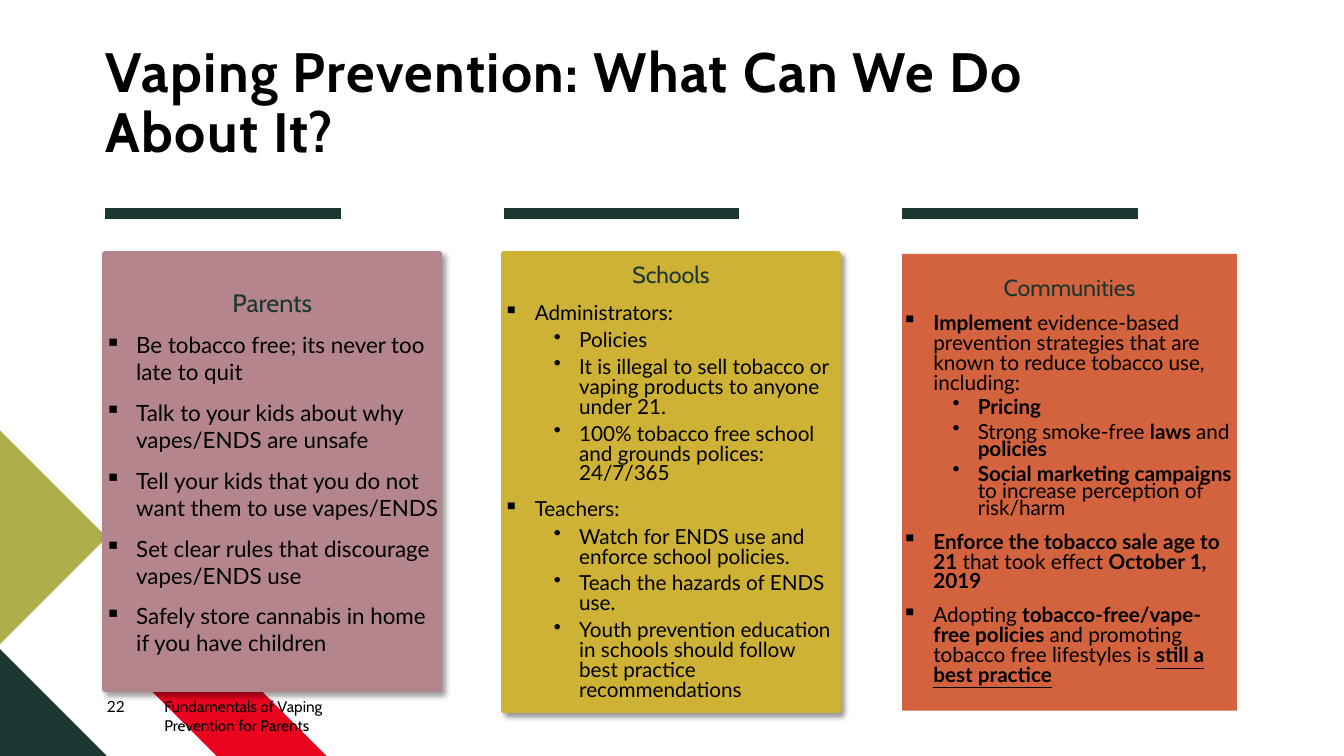
from lxml.etree import SubElement
from pptx import Presentation
from pptx.dml.color import RGBColor
from pptx.enum.shapes import MSO_CONNECTOR, MSO_SHAPE
from pptx.enum.text import MSO_ANCHOR, PP_ALIGN
from pptx.oxml.ns import qn
from pptx.util import Inches, Pt

COLUMNS, ROWS = 160, 90
CARD_LEFT, CARD_TOP, CARD_WIDTH, CARD_STEP = 12.5, 30.24, 39.84, 47.45
RULE_ROW, RULE_WIDTH = 25.44, 28.05
BLACK, GREEN, HEADING = "000000", "1C3731", "1B3630"
BULLETS = [("▪", 0.31, 0.31, 10), ("•", 0.75, 0.25, 5)]

CORNERS = [
    ("EA031E", [(38.88, 90), (25.8, 90), (12.72, 76.92), (19.32, 70.44)]),
    (GREEN, [(12.72, 90), (0, 90), (0, 77.28)]),
    ("AFAE4D", [(0, 51.24), (12.72, 63.96), (0, 76.68)]),
]

CARDS = [
    {"heading": "Parents", "fill": "B4858D", "rows": 51.84, "framed": True,
     "sizes": (18, 16), "spacing": (1.0, 1.0), "items": [
         (0, "Be tobacco free; its never too late to quit"),
         (0, "Talk to your kids about why vapes/ENDS are unsafe"),
         (0, "Tell your kids that you do not want them to use vapes/ENDS"),
         (0, "Set clear rules that discourage vapes/ENDS use"),
         (0, "Safely store cannabis in home if you have children")]},
    {"heading": "Schools", "fill": "CDB235", "rows": 54.36, "framed": True,
     "sizes": (16.6, 14.8), "spacing": (0.9, 0.8), "items": [
         (0, "Administrators:"),
         (1, "Policies"),
         (1, "It is illegal to sell tobacco or vaping products to anyone under 21."),
         (1, "100% tobacco free school and grounds polices: 24/7/365"),
         (0, "Teachers:"),
         (1, "Watch for ENDS use and enforce school policies."),
         (1, "Teach the hazards of ENDS use."),
         (1, "Youth prevention education in schools should follow best practice "
             "recommendations")]},
    {"heading": "Communities", "fill": "D3623E", "rows": 54.36, "framed": False,
     "sizes": (16.6, 14.8), "spacing": (0.8, 0.7), "items": [
         (0, "*Implement* evidence-based prevention strategies that are known to "
             "reduce tobacco use, including:"),
         (1, "*Pricing*"),
         (1, "Strong smoke-free *laws *and *policies*"),
         (1, "*Social marketing campaigns *to increase perception of risk/harm"),
         (0, "*Enforce the tobacco sale age to 21* that took effect *October 1, 2019*"),
         (0, "Adopting *tobacco-free/vape-free policies *and promoting tobacco free "
             "lifestyles is *_still a best practice*")]},
]


def colour(value):
    return RGBColor.from_string(value)


def assign(target, values):
    for name, value in values.items():
        setattr(target, name, value)


class Slide:
    """Draws styled elements on one slide, placed on a 160 by 90 grid."""

    def __init__(self, deck):
        self.page = deck.slides.add_slide(deck.slide_layouts[6])
        self.column = deck.slide_width / COLUMNS
        self.row = deck.slide_height / ROWS

    def place(self, *lengths):
        units = (self.column, self.row) * 2
        return [round(length * unit) for length, unit in zip(lengths, units)]

    def corner(self, fill, points):
        start, *others = [self.place(*point) for point in points]
        builder = self.page.shapes.build_freeform(*start)
        builder.add_line_segments(others, close=True)
        self.paint(builder.convert_to_shape(), fill)

    def paint(self, shape, fill):
        shape.shadow.inherit = False
        shape.fill.solid()
        shape.fill.fore_color.rgb = colour(fill)
        shape.line.fill.background()

    def rule(self, left, top, width):
        ends = self.place(left, top, left + width, top)
        line = self.page.shapes.add_connector(MSO_CONNECTOR.STRAIGHT, *ends)
        line.line.color.rgb = colour(GREEN)
        line.line.width = Pt(8)
        SubElement(line._element.spPr, qn("a:effectLst"))

    def frame(self, shape, anchor):
        assign(shape.text_frame, {
            "word_wrap": True, "vertical_anchor": anchor, "margin_left": 0,
            "margin_right": 0, "margin_top": 0, "margin_bottom": 0})
        return shape.text_frame

    def compose(self, para, text, size, face, ink=BLACK, **layout):
        assign(para, {"alignment": PP_ALIGN.LEFT, **layout})
        for index, piece in enumerate(text.split("*")):
            if piece:
                span = para.add_run()
                span.text = piece.removeprefix("_")
                assign(span.font, {"size": Pt(size), "name": face, "bold": index % 2 == 1,
                                   "underline": piece.startswith("_")})
                span.font.color.rgb = colour(ink)

    def label(self, area, text, size, face, anchor=MSO_ANCHOR.TOP, tracking=0, **layout):
        box = self.page.shapes.add_textbox(*self.place(*area))
        para = self.frame(box, anchor).paragraphs[0]
        self.compose(para, text, size, face, **layout)
        for span in para.runs:
            span._r.get_or_add_rPr().set("spc", str(tracking))

    def bullet(self, para, level):
        mark, margin, hang, _ = BULLETS[level]
        properties = para._p.get_or_add_pPr()
        properties.set("marL", str(Inches(margin)))
        properties.set("indent", str(-Inches(hang)))
        SubElement(properties, qn("a:buChar"), char=mark)

    def raise_card(self, box, fill):
        box.line.color.rgb = colour(fill)
        box.line.width = Pt(4)
        effects = box._element.spPr.find(qn("a:effectLst"))
        shadow = SubElement(effects, qn("a:outerShdw"), blurRad=str(Pt(4)),
                            dist=str(Pt(3)), dir="2700000", algn="tl", rotWithShape="0")
        tint = SubElement(shadow, qn("a:srgbClr"), val=BLACK)
        SubElement(tint, qn("a:alpha"), val="40000")

    def card(self, left, heading, fill, rows, framed, sizes, spacing, items):
        area = self.place(left, CARD_TOP, CARD_WIDTH, rows)
        box = self.page.shapes.add_shape(MSO_SHAPE.RECTANGLE, *area)
        self.paint(box, fill)
        if framed:
            self.raise_card(box, fill)
        frame = self.frame(box, MSO_ANCHOR.MIDDLE)
        self.compose(frame.paragraphs[0], heading, sizes[0], "Cabin", HEADING,
                     alignment=PP_ALIGN.CENTER, line_spacing=spacing[0], space_before=Pt(10))
        for level, text in items:
            para = frame.add_paragraph()
            self.compose(para, text, sizes[1], "Lato", level=level,
                         line_spacing=spacing[level], space_before=Pt(BULLETS[level][3]))
            self.bullet(para, level)


def main():
    deck = Presentation()
    assign(deck, {"slide_width": Inches(13.33), "slide_height": Inches(7.5)})
    slide = Slide(deck)
    for fill, points in CORNERS:
        slide.corner(fill, points)
    slide.label((12.6, 11.52, 123.6, 8.04), "*Vaping Prevention: What Can We Do About It?*",
                39.6, "Cabin", MSO_ANCHOR.BOTTOM, 100, line_spacing=0.9)
    for index, card in enumerate(CARDS):
        left = CARD_LEFT + index * CARD_STEP
        slide.rule(left, RULE_ROW, RULE_WIDTH)
        slide.card(left, **card)
    slide.label((19.56, 83.04, 19.68, 3.24),
                "Fundamentals of Vaping Prevention for Parents", 11, "Cabin")
    slide.label((12.72, 83.04, 6.84, 3.24), "22", 11, "Lato")
    deck.save("out.pptx")


if __name__ == "__main__":
    main()
